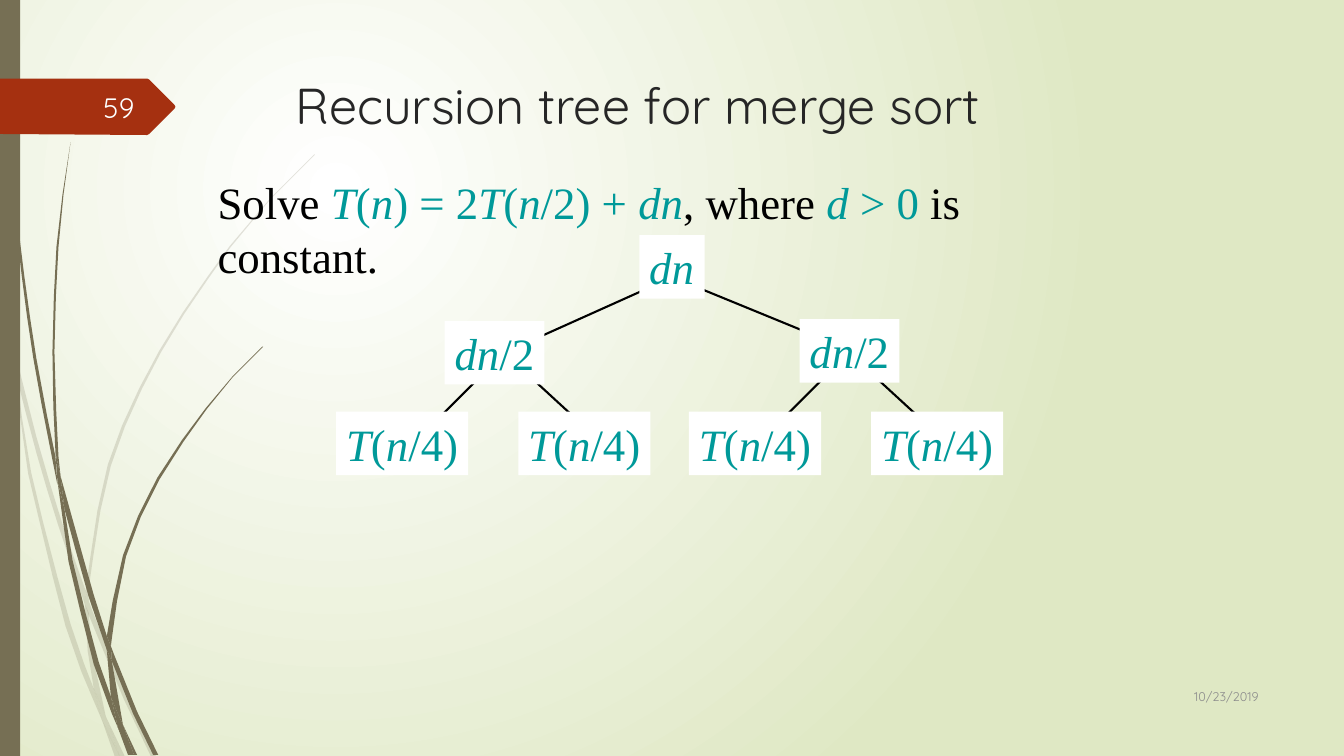
from dataclasses import dataclass
from itertools import groupby
from math import dist
from typing import NamedTuple

from lxml import etree
from pptx import Presentation
from pptx import util as u
from pptx.dml.color import RGBColor
from pptx.enum import shapes, text
from pptx.oxml import ns

# Colours and fonts
WHITE = RGBColor(0xFF, 0xFF, 0xFF)
BLACK = RGBColor(0x00, 0x00, 0x00)
PALE_GREEN = RGBColor(0xDF, 0xE8, 0xC4)
OLIVE = RGBColor(0x76, 0x6F, 0x54)
RUST = RGBColor(0xA5, 0x30, 0x10)
TEAL = RGBColor(0x00, 0x99, 0x99)
CHARCOAL = RGBColor(0x26, 0x26, 0x26)
GREY = RGBColor(0x8C, 0x8C, 0x8C)
OFF_WHITE = RGBColor(0xFE, 0xFF, 0xFF)
SANS, SERIF = "Quicksand", "Times New Roman"

# The slide is a grid of 1333 columns by 750 rows
CELL = u.Inches(0.01)
COLS, ROWS = 1333, 750
Point = tuple[float, float]


class Box(NamedTuple):
    col: float
    row: float
    cols: float
    rows: float

    def emu(self) -> list[int]:
        return [round(v * CELL) for v in self]


class Span(NamedTuple):
    text: str
    color: RGBColor
    italic: bool = False


class Blade(NamedTuple):
    """Piece of a grass stem: its edge out, then its edge back."""
    out: list[Point]
    back: list[Point]


@dataclass
class Label:
    box: Box
    spans: list[Span]
    font: str
    size: int
    align: text.PP_ALIGN = text.PP_ALIGN.LEFT
    anchor: text.MSO_ANCHOR = text.MSO_ANCHOR.TOP
    wrap: bool = True


def formula(expr: str) -> list[Span]:
    """Teal maths with the letters in italics."""
    return [Span("".join(g), TEAL, letters) for letters, g in groupby(expr, str.isalpha)]


def node(expr: str, col: float, row: float, cols: float) -> Label:
    return Label(Box(col, row, cols, 63), formula(expr), SERIF, 32, wrap=False)


PALE_STEMS = [
    Blade([(0, 282), (9, 322), (11, 350)], [(10, 344), (0, 299)]),
    Blade([(14, 345), (36, 433), (62, 520), (85, 586)], [(84, 599), (58, 522), (36, 449), (17, 376)]),
    Blade([(88, 596), (92, 607), (127, 692), (155, 751)], [(150, 751), (123, 694), (88, 610)]),
    Blade([(105, 711), (124, 751)], [(119, 751)]),
    Blade([(11, 350), (17, 376), (31, 469), (70, 619), (93, 683), (101, 714)],
          [(92, 693), (65, 621), (28, 470)]),
    Blade([(84, 599), (88, 608), (91, 646), (105, 711)], [(93, 683), (87, 646)]),
    Blade([(85, 586), (107, 461), (158, 348), (228, 244), (268, 197), (312, 153)],
          [(312, 154), (268, 198), (229, 245), (160, 349), (110, 462), (88, 584), (88, 596)]),
    Blade([(101, 714), (119, 751)], [(114, 751)]),
    Blade([(85, 586), (88, 596), (88, 610)], [(84, 599)]),
    Blade([(93, 683), (105, 711), (119, 751)], [(101, 714)]),
]
DARK_STEMS = [
    Blade([(3, 0), (4, 48), (7, 110), (17, 233), (33, 355), (57, 481)],
          [(55, 453), (36, 355), (19, 232), (8, 109), (5, 48), (4, 0)]),
    Blade([(60, 472), (93, 590), (106, 631)], [(106, 645), (88, 592), (64, 505)]),
    Blade([(110, 641), (113, 649), (136, 706), (157, 749)], [(152, 749), (132, 708), (111, 656)]),
    Blade([(57, 477), (64, 505), (72, 556), (98, 657), (110, 691), (117, 722)],
          [(111, 708), (93, 659), (68, 557)]),
    Blade([(70, 141), (62, 193), (56, 245), (52, 349), (55, 449), (60, 472)],
          [(58, 453), (54, 349), (58, 245), (63, 193), (70, 141)]),
    Blade([(122, 719), (136, 749)], [(133, 749)]),
    Blade([(55, 449), (60, 472), (64, 505)], [(57, 477)]),
    Blade([(106, 631), (122, 551), (156, 474), (204, 405), (231, 373), (260, 344)],
          [(261, 344), (231, 374), (205, 406), (158, 476), (125, 552), (111, 633), (110, 641)]),
    Blade([(117, 722), (131, 749)], [(127, 749)]),
    Blade([(106, 645), (111, 656), (122, 719)], [(116, 706), (110, 691)]),
    Blade([(106, 631), (110, 641), (111, 656)], [(106, 645)]),
    Blade([(110, 691), (116, 706), (122, 719), (133, 749)], [(130, 749), (117, 722)]),
]
PAGE_TAB = [(0, 78), (146, 78), (148, 79), (173, 104), (174, 106), (173, 108), (148, 133), (146, 134), (0, 133)]

LABELS = [
    Label(Box(1133, 670, 125, 41), [Span("10/23/2019", GREY)], SANS, 9,
          text.PP_ALIGN.RIGHT, text.MSO_ANCHOR.MIDDLE),
    Label(Box(58, 86, 85, 40), [Span("59", OFF_WHITE)], SANS, 20,
          text.PP_ALIGN.RIGHT, text.MSO_ANCHOR.MIDDLE),
    Label(Box(283.5, 68.75, 975, 140), [Span("Recursion tree for merge sort", CHARCOAL)], SANS, 36),
    Label(Box(206, 168.5, 920, 63),
          [Span("Solve ", BLACK), *formula("T(n) = 2T(n/2) + dn"), Span(", where ", BLACK),
           *formula("d > 0"), Span(" is constant.", BLACK)], SERIF, 32),
]
EDGES = [((667, 275), (500, 350)), ((667, 275), (850, 350)),
         *(((parent, 350), (leaf, 442)) for parent, leaf in [(500, 408), (842, 750), (842, 942), (500, 600)])]
NODES = [node("dn", 634, 233.33, 65),
         *(node("T(n/4)", col, 408.5, 131) for col in (333.33, 514, 683.33, 864)),
         node("dn/2", 441, 318.5, 99), node("dn/2", 793, 316.67, 99)]


def smooth(nodes: list[Point]) -> list[Point]:
    """Sparse points along a Catmull-Rom curve through the nodes."""
    padded = [nodes[0], *nodes, nodes[-1]]
    points = [nodes[0]]
    for a, b, c, d in zip(padded, padded[1:], padded[2:], padded[3:]):
        steps = max(1, round(dist(b, c) / 45))
        for t in (i / steps for i in range(1, steps + 1)):
            points.append(tuple(
                (2 * q + (r - p) * t + (2 * p - 5 * q + 4 * r - s) * t ** 2
                 + (3 * q - p - 3 * r + s) * t ** 3) / 2
                for p, q, r, s in zip(a, b, c, d)))
    return points


def paint(sp, color: RGBColor, opacity: int = 100) -> None:
    sp.shadow.inherit = False
    sp.fill.solid()
    sp.fill.fore_color.rgb = color
    sp.line.fill.background()
    if opacity < 100:
        clr = sp.element.spPr.find(f"{ns.qn('a:solidFill')}/{ns.qn('a:srgbClr')}")
        etree.SubElement(clr, ns.qn("a:alpha"), val=str(opacity * 1000))


def draw_outline(parent, points: list[Point], color: RGBColor, opacity: int = 100) -> None:
    start, *rest = [(round(x * CELL), round(y * CELL)) for x, y in points]
    builder = parent.build_freeform(*start)
    builder.add_line_segments(rest, close=True)
    paint(builder.convert_to_shape(), color, opacity)


def draw_edge(parent, begin: Point, end: Point) -> None:
    cxn = parent.add_connector(shapes.MSO_CONNECTOR.STRAIGHT, *(round(v * CELL) for v in (*begin, *end)))
    cxn.line.color.rgb = BLACK
    cxn.line.width = u.Pt(1.5)
    etree.SubElement(cxn.element.spPr, ns.qn("a:effectLst"))


def write(sp, label: Label) -> None:
    tf = sp.text_frame
    for name, value in {"word_wrap": label.wrap, "vertical_anchor": label.anchor}.items():
        setattr(tf, name, value)
    p = tf.paragraphs[0]
    p.alignment = label.align
    for span in label.spans:
        r = p.add_run()
        r.text = span.text
        for name, value in {"name": label.font, "size": u.Pt(label.size), "italic": span.italic}.items():
            setattr(r.font, name, value)
        r.font.color.rgb = span.color


def draw_background(slide) -> None:
    fill = slide.background.fill
    fill.gradient()
    for stop, position, color in zip(fill.gradient_stops, (0, 1), (WHITE, PALE_GREEN)):
        stop.position = position
        stop.color.rgb = color
    grad = slide.element.find(f".//{ns.qn('a:gradFill')}")
    grad.remove(grad.find(ns.qn("a:lin")))
    circle = etree.SubElement(grad, ns.qn("a:path"), path="circle")
    etree.SubElement(circle, ns.qn("a:fillToRect"), l="50000", t="50000", r="100000", b="100000")


def main() -> None:
    prs = Presentation()
    prs.slide_width, prs.slide_height = COLS * CELL, ROWS * CELL
    slide = prs.slides.add_slide(prs.slide_layouts[6])
    draw_background(slide)
    # Grass, side bar and page tab
    for stems, opacity in ((PALE_STEMS, 20), (DARK_STEMS, 100)):
        grass = slide.shapes.add_group_shape().shapes
        for blade in stems:
            draw_outline(grass, smooth(blade.out) + smooth(blade.back), OLIVE, opacity)
    paint(slide.shapes.add_shape(shapes.MSO_SHAPE.RECTANGLE, *Box(0, 0, 20, ROWS).emu()), OLIVE)
    draw_outline(slide.shapes, PAGE_TAB, RUST)
    # Date, page number, title and problem
    for label in LABELS:
        write(slide.shapes.add_textbox(*label.box.emu()), label)
    # Recursion tree
    tree = slide.shapes.add_group_shape().shapes
    for begin, end in EDGES:
        draw_edge(tree, begin, end)
    for label in NODES:
        sp = tree.add_shape(shapes.MSO_SHAPE.RECTANGLE, *label.box.emu())
        paint(sp, WHITE)
        write(sp, label)
    prs.save("out.pptx")


if __name__ == "__main__":
    main()
